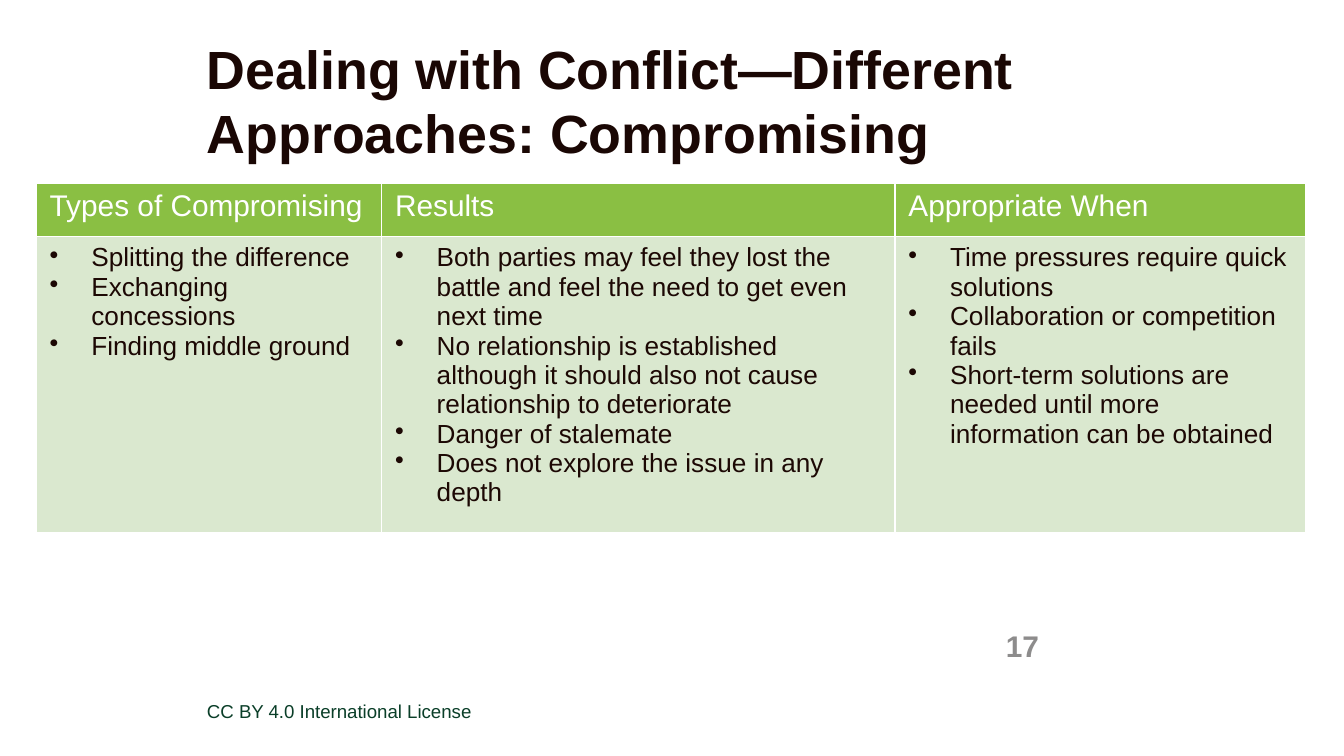
import pptx
import pptx.util
import pptx.dml.color
import pptx.enum.text
import pptx.oxml
import pptx.oxml.ns

Inches, Pt = pptx.util.Inches, pptx.util.Pt
RGB = pptx.dml.color.RGBColor
ALIGN, ANCHOR = pptx.enum.text.PP_ALIGN, pptx.enum.text.MSO_ANCHOR

WHITE = RGB(0xFF, 0xFF, 0xFF)
DARK = RGB(0x1A, 0x07, 0x04)
INK = RGB(0x1C, 0x08, 0x04)
FOREST = RGB(0x0A, 0x3E, 0x28)
GRAY = RGB(0x8D, 0x8C, 0x8C)
GREEN = RGB(0x8A, 0xBF, 0x43)
PALE = RGB(0xDA, 0xE8, 0xCF)

HEADS = ["Types of Compromising", "Results", "Appropriate When"]
LISTS = [
    ["Splitting the difference", "Exchanging concessions", "Finding middle ground"],
    ["Both parties may feel they lost the battle and feel the need to get even next time",
     "No relationship is established although it should also not cause relationship to deteriorate",
     "Danger of stalemate",
     "Does not explore the issue in any depth"],
    ["Time pressures require quick solutions",
     "Collaboration or competition fails",
     "Short-term solutions are needed until more information can be obtained"],
]


class Deck:
    font = "Arial"
    indent = Inches(0.31)

    def __init__(self, wide, high):
        self.file = pptx.Presentation()
        self.file.slide_width, self.file.slide_height = Inches(wide), Inches(high)
        self.slide = self.file.slides.add_slide(self.file.slide_layouts[6])

    def style(self, para, size, color, bold=False, **form):
        look = {"name": self.font, "size": Pt(size), "bold": bold}
        for key, value in look.items():
            setattr(para.font, key, value)
        para.font.color.rgb = color
        for key, value in form.items():
            setattr(para, key, value)

    def text(self, words, box, size, color, bold=False, top=0,
             anchor=ANCHOR.TOP, **form):
        frame = self.slide.shapes.add_textbox(*map(Inches, box)).text_frame
        look = {"word_wrap": True, "vertical_anchor": anchor, "margin_left": 0,
                "margin_right": 0, "margin_top": Inches(top), "margin_bottom": 0}
        for key, value in look.items():
            setattr(frame, key, value)
        frame.text = words
        self.style(frame.paragraphs[0], size, color, bold, **form)

    def bullet(self, para):
        props = para._p.get_or_add_pPr()
        props.set("marL", str(self.indent))
        props.set("indent", str(-self.indent))
        mark = pptx.oxml.parse_xml(
            f'<a:buChar {pptx.oxml.ns.nsdecls("a")} char="•"/>')
        props.append(mark)

    def cell(self, cell, lines, size, color, fill, listed=False):
        props = cell._tc.get_or_add_tcPr()
        for side in "LRTB":
            props.append(pptx.oxml.parse_xml(
                f'<a:ln{side} {pptx.oxml.ns.nsdecls("a")} w="{Pt(1)}">'
                f'<a:solidFill><a:srgbClr val="{WHITE}"/></a:solidFill></a:ln{side}>'))
        cell.fill.solid()
        cell.fill.fore_color.rgb = fill
        cell.text = "\n".join(lines)
        for para in cell.text_frame.paragraphs:
            if listed:
                self.bullet(para)
            self.style(para, size, color)

    def table(self, left, top, widths, heights):
        box = map(Inches, (left, top, sum(widths), sum(heights)))
        table = self.slide.shapes.add_table(len(heights), len(widths), *box).table
        for col, width in zip(table.columns, widths):
            col.width = Inches(width)
        for row, height in zip(table.rows, heights):
            row.height = Inches(height)
        return table


def main():
    # Widescreen, 16 to 9
    deck = Deck(10, 10 * 9 / 16)

    # Title
    deck.text("Dealing with Conflict—Different Approaches: Compromising",
              (1.54, 0.26, 7.96, 0.4), 28.8, DARK, bold=True, top=0.01,
              line_spacing=Pt(34.3))

    # License and page number
    deck.text("CC BY 4.0 International License", (1.54, 5.21, 5.99, 0.15), 10, FOREST)
    deck.text("17", (7.11, 4.63, 0.62, 0.3), 16, GRAY, bold=True, top=0.05,
              anchor=ANCHOR.MIDDLE, alignment=ALIGN.RIGHT)

    # Table of approaches
    table = deck.table(0.27, 1.36, [2.57, 3.82, 3.06], [0.4, 2.06])
    for col, (head, items) in enumerate(zip(HEADS, LISTS)):
        deck.cell(table.cell(0, col), [head], 16, WHITE, GREEN)
        deck.cell(table.cell(1, col), items, 14, INK, PALE, listed=True)

    deck.file.save("out.pptx")


if __name__ == "__main__":
    main()
